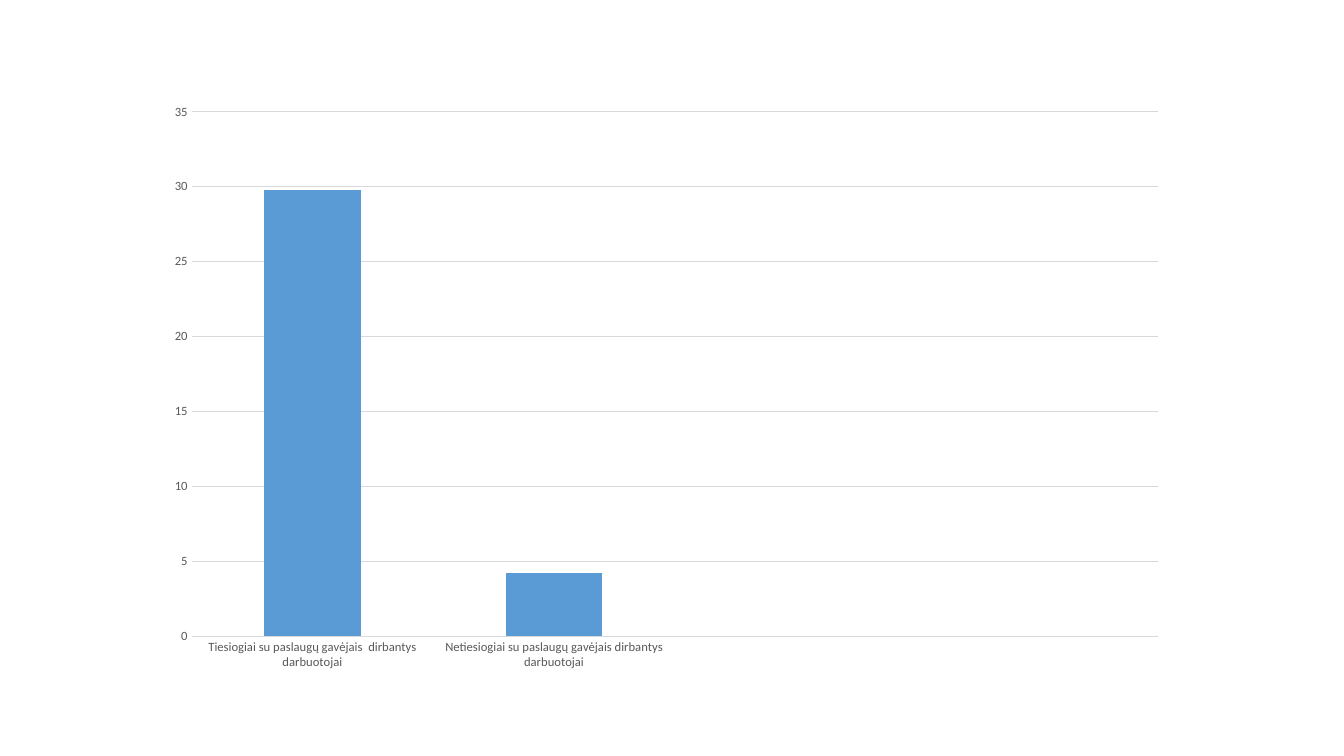
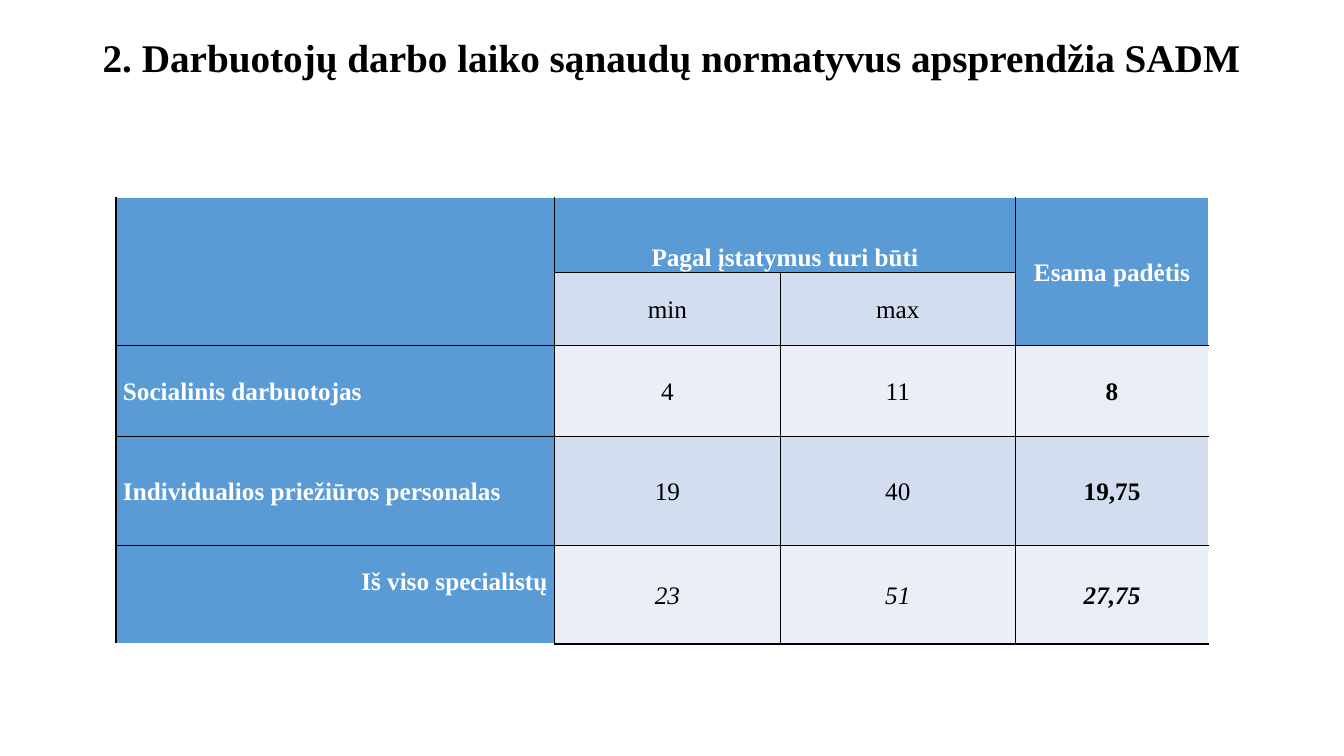
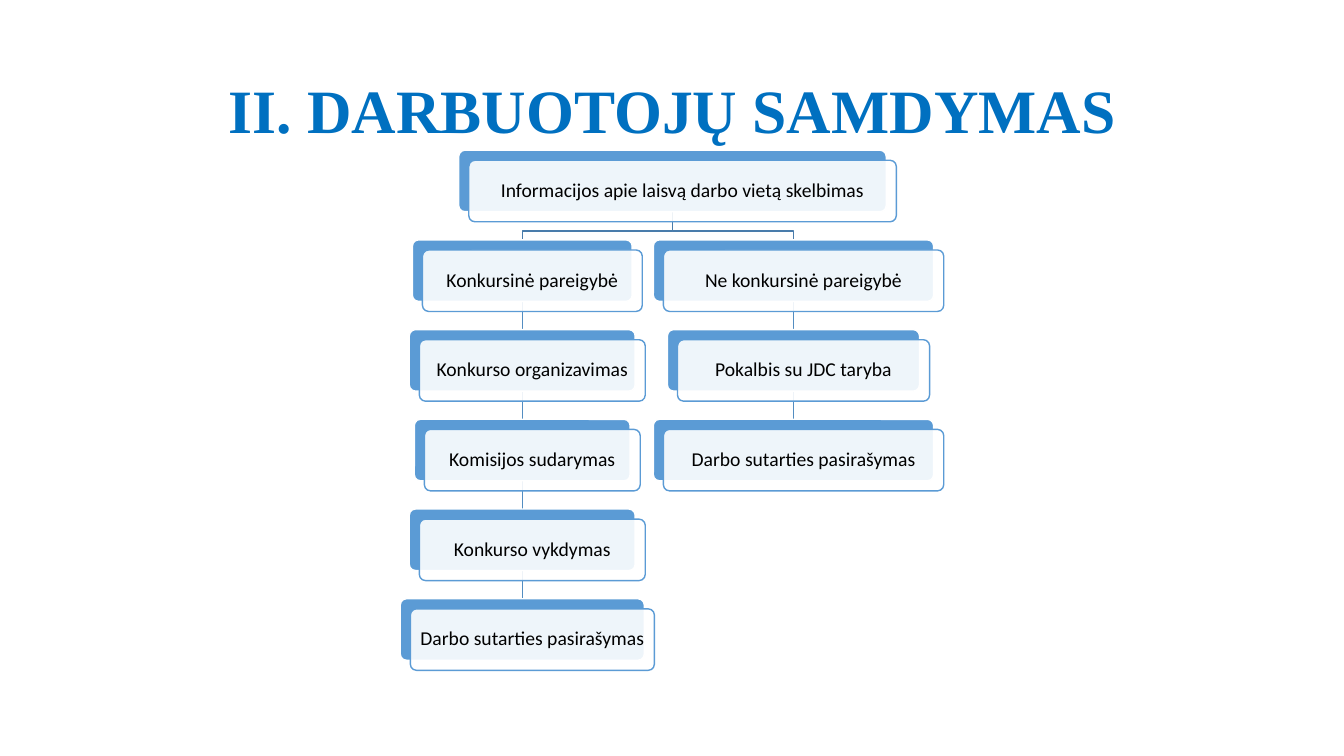
import pptx
import pptx.chart.data
import pptx.dml.color
import pptx.enum.chart
import pptx.enum.shapes
import pptx.enum.text
import pptx.oxml
import pptx.oxml.ns
import pptx.util

PX = 9144  # EMU; 100 px to the inch
SERIF, SANS = "Times New Roman", "Calibri"
BLACK, WHITE, BLUE = "000000", "FFFFFF", "5B9BD5"
TITLE_BLUE, GREY, GRID = "0070C0", "595959", "D9D9D9"
BANDS = ["EAEFF7", "D2DEEF"]
ELBOW, STEM = "497CAB", "538DC1"
ALIGN = pptx.enum.text.PP_ALIGN
ANCHOR = pptx.enum.text.MSO_ANCHOR
SHAPE = pptx.enum.shapes.MSO_SHAPE


def px(*lengths):
    return [pptx.util.Emu(length * PX) for length in lengths]


def rgb(code):
    return pptx.dml.color.RGBColor.from_string(code)


def assign(target, values):
    for name, value in values.items():
        setattr(target, name, value)


def set_font(font, size, color, name=SANS, **styles):
    assign(font, {"size": pptx.util.Pt(size), "name": name, **styles})
    font.color.rgb = rgb(color)


def set_fill(fill, color, opacity=100):
    fill.solid()
    fill.fore_color.rgb = rgb(color)
    if opacity < 100:
        alpha = pptx.oxml.parse_xml(
            f'<a:alpha {pptx.oxml.ns.nsdecls("a")} val="{opacity * 1000}"/>')
        fill.fore_color._xFill[0].append(alpha)


def set_line(line, color, width=1):
    line.color.rgb = rgb(color)
    line.width = pptx.util.Pt(width)


def set_borders(cell, colors):
    """Draw 1 pt cell borders; colors maps L, R, T and B to hex strings."""
    properties = cell._tc.get_or_add_tcPr()
    for side, color in colors.items():
        properties.append(pptx.oxml.parse_xml(
            f'<a:ln{side} {pptx.oxml.ns.nsdecls("a")} w="12700"><a:solidFill>'
            f'<a:srgbClr val="{color}"/></a:solidFill></a:ln{side}>'))


class Slides:
    def __init__(self):
        self.deck = pptx.Presentation()
        self.deck.slide_width, self.deck.slide_height = px(1333, 750)
        self.page = None

    def new_page(self):
        self.page = self.deck.slides.add_slide(self.deck.slide_layouts[6])

    def add_text(self, frame, text, align, spacing, **font):
        para = frame.paragraphs[0]
        assign(para, {"alignment": align, "line_spacing": spacing})
        span = para.add_run()
        span.text = text
        set_font(span.font, **font)

    def title(self, text, place, size, color, align, anchor):
        frame = self.page.shapes.add_textbox(*px(*place)).text_frame
        assign(frame, {"word_wrap": True, "vertical_anchor": anchor})
        self.add_text(frame, text, align, 0.9, size=size, color=color,
                      name=SERIF, bold=True)

    def column_chart(self, place, categories, values):
        data = pptx.chart.data.CategoryChartData()
        data.categories = categories
        data.add_series("Series 1", values)
        chart = self.page.shapes.add_chart(
            pptx.enum.chart.XL_CHART_TYPE.COLUMN_CLUSTERED,
            *px(*place), data).chart
        assign(chart, {"has_legend": False, "has_title": False})
        set_font(chart.font, 10, BLACK)
        plot = chart.plots[0]
        assign(plot, {"gap_width": 150, "vary_by_categories": False})
        set_fill(plot.series[0].format.fill, BLUE)
        no_tick = pptx.enum.chart.XL_TICK_MARK.NONE
        for axis in (chart.category_axis, chart.value_axis):
            assign(axis, {"major_tick_mark": no_tick,
                          "minor_tick_mark": no_tick})
            set_font(axis.tick_labels.font, 9, GREY)
            axis.format.line.fill.background()
        set_line(chart.value_axis.major_gridlines.format.line, GRID, 0.75)

    def table(self, place, widths, heights, rows, merges):
        table = self.page.shapes.add_table(
            len(rows), len(widths), *px(*place)).table
        assign(table, {"first_row": False, "horz_banding": False})
        for column, width in zip(table.columns, px(*widths)):
            column.width = width
        for row, height in zip(table.rows, px(*heights)):
            row.height = height
        last_row, last_column = len(rows) - 1, len(widths) - 1
        for y, texts in enumerate(rows):
            for x, text in enumerate(texts):
                cell = table.cell(y, x)
                header = x == 0 or y == 0
                set_borders(cell, {
                    "L": BLACK,
                    "R": WHITE if x == last_column else BLACK,
                    "T": WHITE if y == 0 else BLACK,
                    "B": WHITE if (y, x) == (last_row, 0) else BLACK})
                set_fill(cell.fill, BLUE if header else BANDS[y % 2])
                side, none = px(7, 0)
                assign(cell, {"margin_left": side, "margin_right": side,
                              "margin_top": none, "margin_bottom": none,
                              "vertical_anchor": ANCHOR.MIDDLE})
                if text:
                    align = ALIGN.LEFT if x == 0 else ALIGN.CENTER
                    self.add_text(cell.text_frame, text, align, 1.07, size=18,
                                  color=WHITE if header else BLACK, name=SERIF,
                                  bold=header or x == last_column,
                                  italic=y == last_row and not header)
        for first, last in merges:
            table.cell(*first).merge(table.cell(*last))
        return table

    def rounded(self, place, fill, line, opacity=100):
        box = self.page.shapes.add_shape(SHAPE.ROUNDED_RECTANGLE, *px(*place))
        box.adjustments[0] = 0.1
        box.shadow.inherit = False
        set_fill(box.fill, fill, opacity)
        set_line(box.line, line)
        return box

    def card(self, text, center, top, width, height=61, offset=10):
        """Draw a blue box with a see-through labelled box over it."""
        left = center - width // 2
        back = self.rounded((left, top, width, height), BLUE, WHITE)
        front = self.rounded((left + offset, top + offset, width, height),
                             WHITE, BLUE, opacity=90)
        frame = front.text_frame
        inset = px(7)[0]
        assign(frame, {"word_wrap": True, "vertical_anchor": ANCHOR.MIDDLE,
                       "margin_left": inset, "margin_right": inset,
                       "margin_top": inset, "margin_bottom": inset})
        self.add_text(frame, text, ALIGN.CENTER, 0.9, size=14, color=BLACK)
        return back

    def send_to_back(self, shape):
        self.page.shapes.element.insert(2, shape.element)

    def stem(self, upper, lower):
        line = self.page.shapes.add_connector(
            pptx.enum.shapes.MSO_CONNECTOR.STRAIGHT, 0, 0, 0, 0)
        line.begin_connect(upper, 2)
        line.end_connect(lower, 0)
        set_line(line.line, STEM)
        line.element.spPr.append(pptx.oxml.parse_xml(
            f'<a:effectLst {pptx.oxml.ns.nsdecls("a")}/>'))
        self.send_to_back(line)

    def elbow(self, points):
        corners = [px(*point) for point in points]
        builder = self.page.shapes.build_freeform(*corners[0])
        builder.add_line_segments(corners[1:], close=False)
        bend = builder.convert_to_shape()
        bend.shadow.inherit = False
        bend.fill.background()
        set_line(bend.line, ELBOW)
        self.send_to_back(bend)


def staff_chart(slides):
    slides.new_page()
    slides.column_chart(
        (153, 92, 1016, 584),
        ["Tiesiogiai su paslaugų gavėjais  dirbantys darbuotojai",
         "Netiesiogiai su paslaugų gavėjais dirbantys darbuotojai", "", ""],
        [29.8, 4.2, None, None])


def norms_table(slides):
    slides.new_page()
    slides.title("2. Darbuotojų darbo laiko sąnaudų normatyvus apsprendžia SADM",
                 (92, 33, 1150, 642), 28, BLACK, ALIGN.LEFT, ANCHOR.TOP)
    table = slides.table(
        (115, 196, 1084, 443), [435, 224, 233, 192], [74, 73, 90, 108, 98],
        [["", "Pagal įstatymus turi būti", "", "Esama padėtis"],
         ["", "min", "max", ""],
         ["Socialinis darbuotojas", "4", "11", "8"],
         ["Individualios priežiūros personalas", "19", "40", "19,75"],
         ["Iš viso specialistų", "23", "51", "27,75"]],
        [((0, 0), (1, 0)), ((0, 1), (0, 2)), ((0, 3), (1, 3))])
    table.cell(0, 1).vertical_anchor = ANCHOR.BOTTOM
    total = table.cell(4, 0)
    total.margin_bottom = px(28)[0]
    total.text_frame.paragraphs[0].alignment = ALIGN.RIGHT


def hiring_chart(slides):
    slides.new_page()
    slides.title("II. DARBUOTOJŲ SAMDYMAS", (92, 40, 1150, 145), 44,
                 TITLE_BLUE, ALIGN.CENTER, ANCHOR.MIDDLE)
    root, top, step = 667, 149, 89
    slides.card("Informacijos apie laisvą darbo vietą skelbimas",
                root, top, 424)
    branches = {
        518: [("Konkursinė pareigybė", 218),
              ("Konkurso organizavimas", 224),
              ("Komisijos sudarymas", 214),
              ("Konkurso vykdymas", 224),
              ("Darbo sutarties pasirašymas", 242)],
        787: [("Ne konkursinė pareigybė", 278),
              ("Pokalbis su JDC taryba", 250),
              ("Darbo sutarties pasirašymas", 278)]}
    for center, stages in branches.items():
        cards = [slides.card(text, center, top + step * level, width)
                 for level, (text, width) in enumerate(stages, 1)]
        for upper, lower in zip(cards, cards[1:]):
            slides.stem(upper, lower)
        slides.elbow([(root, 210), (root, 229), (center, 229),
                      (center, top + step)])


def main():
    slides = Slides()
    staff_chart(slides)
    norms_table(slides)
    hiring_chart(slides)
    slides.deck.save("out.pptx")


if __name__ == "__main__":
    main()
